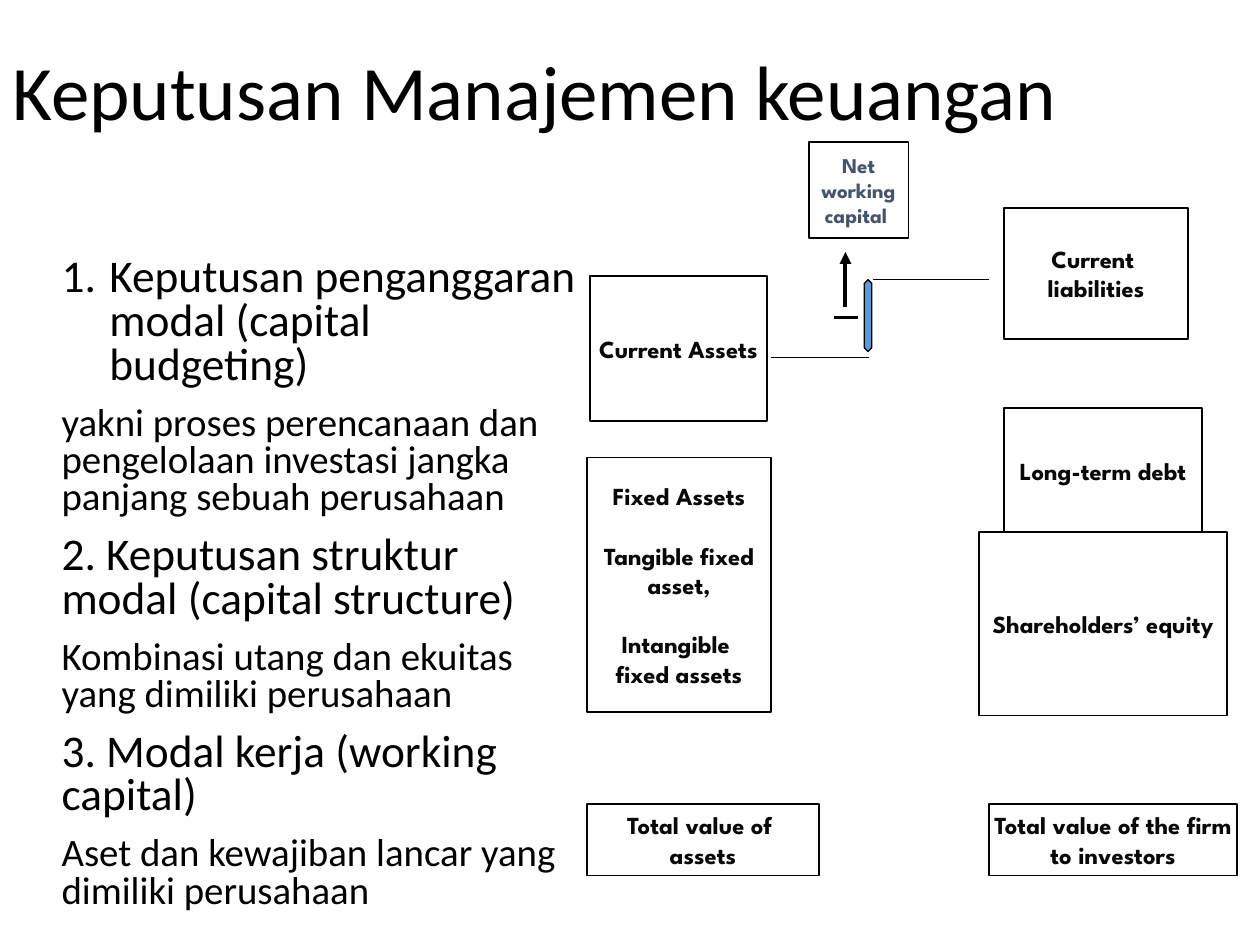
from dataclasses import dataclass

from lxml.etree import SubElement
from pptx import Presentation
from pptx.dml.color import RGBColor
from pptx.enum.shapes import MSO_CONNECTOR, MSO_SHAPE
from pptx.enum.text import MSO_ANCHOR as ANCHOR, PP_ALIGN as ALIGN
from pptx.oxml.ns import qn
from pptx.util import Inches, Pt


@dataclass(frozen=True)
class Theme:
    body_font: str = "Calibri"
    box_font: str = "League Spartan"
    black: str = "000000"
    white: str = "FFFFFF"
    box_text: str = "080808"
    accent_text: str = "44546A"
    arrow_fill: str = "5B9BD5"
    title_size: float = 44
    heading_size: float = 25.9
    detail_size: float = 22.2
    box_size: float = 14
    small_size: float = 12
    box_line: float = 1
    thin_line: float = 0.75
    thick_line: float = 2.25


THEME = Theme()

DECISIONS = [
    ("Keputusan penganggaran modal (capital budgeting)",
     "yakni proses perencanaan dan pengelolaan investasi jangka panjang sebuah perusahaan"),
    ("2. Keputusan struktur modal (capital structure)",
     "Kombinasi utang dan ekuitas yang dimiliki perusahaan"),
    ("3. Modal kerja (working capital)",
     "Aset dan kewajiban lancar yang dimiliki perusahaan"),
]

# Each box: left, top, width, height, then groups of lines
BALANCE_BOXES = [
    (4.68, 2.19, 1.41, 1.15, [["Current Assets"]]),
    (4.66, 3.63, 1.46, 2.02, [["Fixed Assets"], ["Tangible fixed", "asset,"],
                              ["Intangible ", "fixed assets"]]),
    (7.97, 1.65, 1.46, 1.04, [["Current ", "liabilities"]]),
    (7.97, 3.24, 1.57, 0.99, [["Long-term debt"]]),
    (7.77, 4.22, 1.97, 1.46, [["Shareholders’ equity"]]),
    (4.66, 6.38, 1.84, 0.57, [["Total value of ", "assets"]]),
    (7.85, 6.38, 1.97, 0.57, [["Total value of the firm", "to investors"]]),
]


def rgb(value):
    return RGBColor.from_string(value)


def style_runs(p, font, size, color, bold=False):
    for r in p.runs:
        r.font.name = font
        r.font.size = Pt(size)
        r.font.bold = bold
        r.font.color.rgb = rgb(color)


def add_text_box(slide, left, top, width, height, anchor):
    sp = slide.shapes.add_textbox(Inches(left), Inches(top), Inches(width), Inches(height))
    tf = sp.text_frame
    tf.word_wrap = True
    tf.vertical_anchor = anchor
    return tf


def add_title(slide, text):
    tf = add_text_box(slide, 0, 0.03, 8.62, 1.45, ANCHOR.MIDDLE)
    tf.text = text
    p = tf.paragraphs[0]
    p.line_spacing = 0.9
    style_runs(p, THEME.body_font, THEME.title_size, THEME.black)


def number_paragraph(p, indent):
    """Give a paragraph automatic numbering with a hanging indent."""
    pPr = p._p.get_or_add_pPr()
    pPr.set("marL", str(Inches(indent)))
    pPr.set("indent", str(-Inches(indent)))
    SubElement(pPr, qn("a:buFont"), typeface=THEME.body_font)
    SubElement(pPr, qn("a:buAutoNum"), type="arabicPeriod")


def add_decisions(slide, decisions):
    tf = add_text_box(slide, 0.39, 2, 4.28, 4.76, ANCHOR.TOP)
    tf.text = "\n".join(text for pair in decisions for text in pair)
    for i, p in enumerate(tf.paragraphs):
        if i == 0:
            number_paragraph(p, 0.38)
        else:
            p.space_before = Pt(10)
        p.line_spacing = 0.8
        size = THEME.detail_size if i % 2 else THEME.heading_size
        style_runs(p, THEME.body_font, size, THEME.black)


def add_shape(slide, kind, left, top, width, height, fill, line_width):
    sp = slide.shapes.add_shape(kind, Inches(left), Inches(top), Inches(width), Inches(height))
    sp.shadow.inherit = False
    sp.fill.solid()
    sp.fill.fore_color.rgb = rgb(fill)
    sp.line.color.rgb = rgb(THEME.black)
    sp.line.width = Pt(line_width)
    return sp


def add_box(slide, left, top, width, height, groups,
            size=THEME.box_size, color=THEME.box_text):
    """Add a labelled rectangle; groups of lines are set one line apart."""
    sp = add_shape(slide, MSO_SHAPE.RECTANGLE, left, top, width, height,
                   THEME.white, THEME.box_line)
    tf = sp.text_frame
    tf.word_wrap = False
    tf.vertical_anchor = ANCHOR.MIDDLE
    tf.text = "\n".join(line for group in groups for line in group)
    group_starts = [i == 0 for group in groups for i in range(len(group))]
    for i, (p, starts_group) in enumerate(zip(tf.paragraphs, group_starts)):
        p.alignment = ALIGN.CENTER
        if i and starts_group:
            p.space_before = Pt(17)
        style_runs(p, THEME.box_font, size, color, bold=True)


def add_line(slide, x1, y1, x2, y2, width, arrow=False):
    cxn = slide.shapes.add_connector(MSO_CONNECTOR.STRAIGHT, Inches(x1), Inches(y1),
                                     Inches(x2), Inches(y2))
    cxn.line.color.rgb = rgb(THEME.black)
    cxn.line.width = Pt(width)
    if arrow:
        SubElement(cxn.line._get_or_add_ln(), qn("a:tailEnd"), type="triangle")
    SubElement(cxn._element.spPr, qn("a:effectLst"))


def add_working_capital(slide):
    """Mark the gap between current assets and liabilities, pointing to its name."""
    add_line(slide, 6.12, 2.84, 6.9, 2.84, THEME.thin_line)
    add_line(slide, 7.85, 2.22, 6.93, 2.22, THEME.thin_line)
    gap = add_shape(slide, MSO_SHAPE.UP_DOWN_ARROW, 6.86, 2.22, 0.06, 0.57,
                    THEME.arrow_fill, THEME.thin_line)
    gap.adjustments[0] = 0.5
    gap.adjustments[1] = 1.57
    add_box(slide, 6.42, 1.13, 0.79, 0.76, [["Net", "working", "capital "]],
            THEME.small_size, THEME.accent_text)
    add_line(slide, 6.81, 2.52, 6.62, 2.52, THEME.thick_line)
    add_line(slide, 6.71, 2.44, 6.71, 2, THEME.thick_line, arrow=True)


def main():
    prs = Presentation()
    prs.slide_width, prs.slide_height = Inches(10), Inches(7.5)
    slide = prs.slides.add_slide(prs.slide_layouts[6])
    add_title(slide, "Keputusan Manajemen keuangan")
    add_decisions(slide, DECISIONS)
    for box in BALANCE_BOXES:
        add_box(slide, *box)
    add_working_capital(slide)
    prs.save("out.pptx")


if __name__ == "__main__":
    main()
